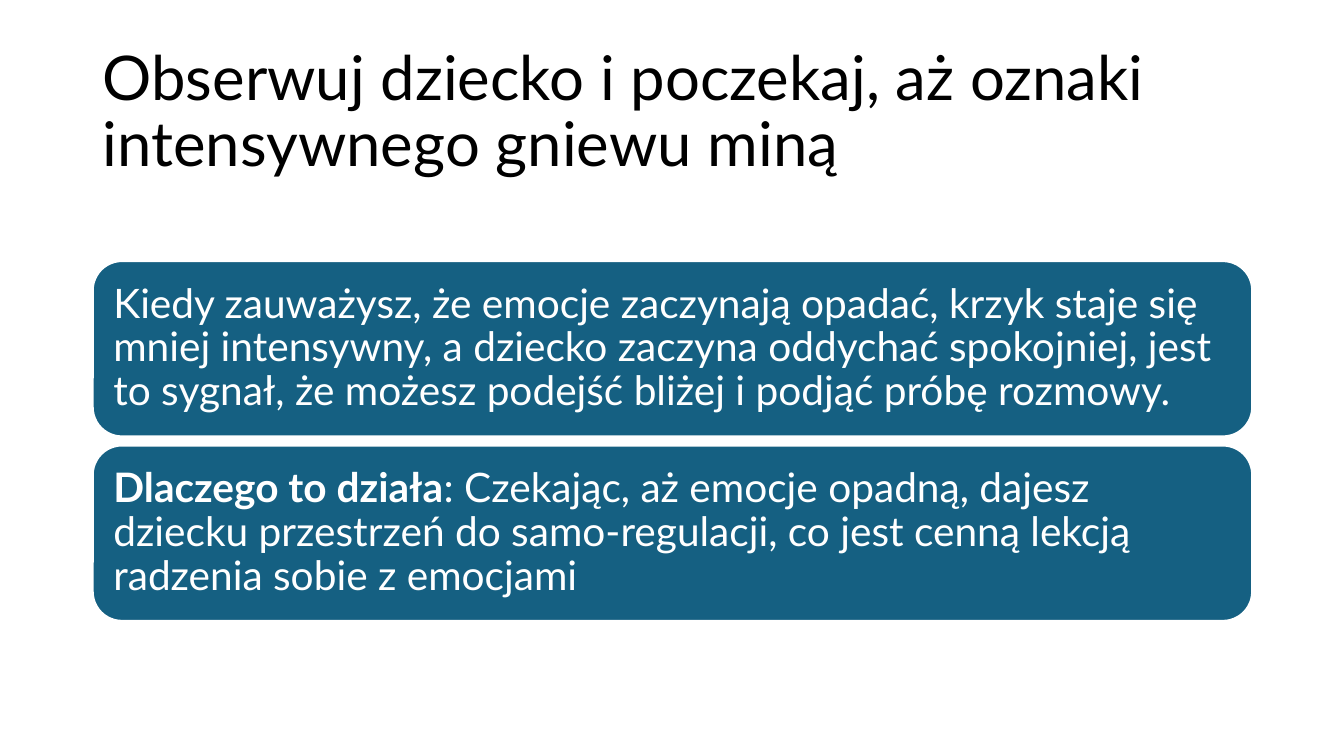
from pptx import Presentation
from pptx.dml.color import RGBColor
from pptx.enum.shapes import MSO_SHAPE as Shape
from pptx.enum.text import MSO_ANCHOR as Anchor, PP_ALIGN as Align
from pptx.util import Emu, Pt

PX = 9144
FONT = "Lato"
BLACK = RGBColor(0x00, 0x00, 0x00)
WHITE = RGBColor(0xFF, 0xFF, 0xFF)
TEAL = RGBColor(0x15, 0x60, 0x82)

TITLE = "Obserwuj dziecko i poczekaj, aż oznaki intensywnego gniewu miną"
CARDS = [
    ("", "Kiedy zauważysz, że emocje zaczynają opadać, krzyk staje się mniej "
         "intensywny, a dziecko zaczyna oddychać spokojniej, jest to sygnał, "
         "że możesz podejść bliżej i podjąć próbę rozmowy."),
    ("Dlaczego to działa", ": Czekając, aż emocje opadną, dajesz dziecku "
                           "przestrzeń do samo-regulacji, co jest cenną lekcją "
                           "radzenia sobie z emocjami"),
]


def px(length):
    """Turn a length in px into EMU."""
    return Emu(length * PX)


def write(frame, lead, body, size, color, inset_x, inset_y):
    """Fill a text frame with one paragraph that opens with a bold lead."""
    frame.word_wrap = True
    frame.vertical_anchor = Anchor.MIDDLE
    frame.margin_left = frame.margin_right = px(inset_x)
    frame.margin_top = frame.margin_bottom = px(inset_y)
    para = frame.paragraphs[0]
    para.alignment = Align.LEFT
    para.line_spacing = 0.9
    para.font.name = FONT
    para.font.size = Pt(size)
    para.font.color.rgb = color
    if lead:
        span = para.add_run()
        span.text = lead
        span.font.bold = True
    para.add_run().text = body


def add_title(page, left, top, width, height):
    """Place the slide title in the given box."""
    box = page.shapes.add_textbox(px(left), px(top), px(width), px(height))
    write(box.text_frame, "", TITLE, 44, BLACK, 10, 5)


def add_cards(page, left, top, width, height, gap):
    """Stack the rounded cards evenly in the given box."""
    card_height = (height - gap * (len(CARDS) - 1)) // len(CARDS)
    for index, (lead, body) in enumerate(CARDS):
        card_top = top + index * (card_height + gap)
        card = page.shapes.add_shape(Shape.ROUNDED_RECTANGLE, px(left),
                                     px(card_top), px(width), px(card_height))
        card.shadow.inherit = False
        card.fill.solid()
        card.fill.fore_color.rgb = TEAL
        card.line.color.rgb = WHITE
        card.line.width = Pt(1.5)
        write(card.text_frame, lead, body, 29, WHITE, 12, 12)


def main():
    """Build and save the one-slide deck."""
    deck = Presentation()
    deck.slide_width, deck.slide_height = px(1333), px(750)
    page = deck.slides.add_slide(deck.slide_layouts[6])
    add_title(page, 92, 40, 1150, 145)
    add_cards(page, 92, 259, 1150, 357, 9)
    deck.save("out.pptx")


if __name__ == "__main__":
    main()
